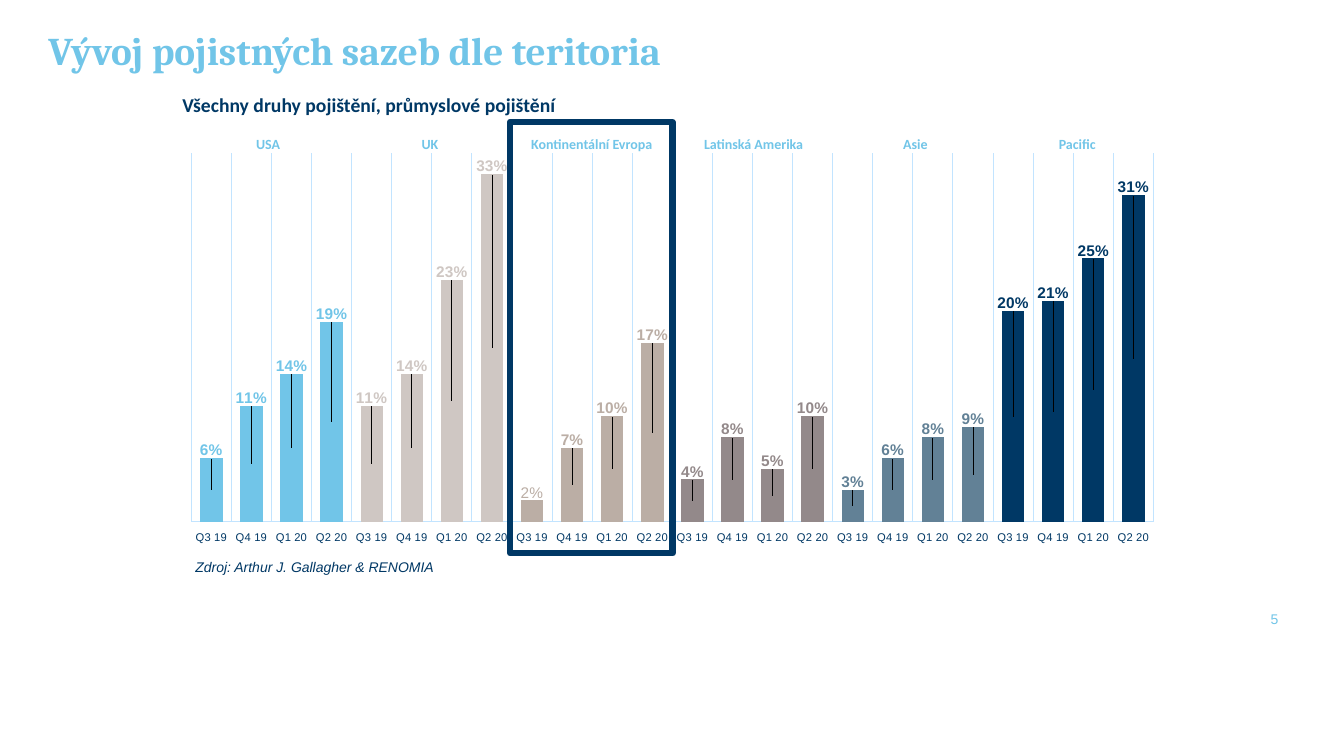
from lxml import etree
from pptx import Presentation
from pptx.chart.data import CategoryChartData
from pptx.dml.color import RGBColor
from pptx.enum.chart import XL_CHART_TYPE as ChartType, XL_LABEL_POSITION as LabelPosition
from pptx.enum.chart import XL_TICK_LABEL_POSITION as TickLabels, XL_TICK_MARK as TickMark
from pptx.enum.shapes import MSO_SHAPE as Shape
from pptx.enum.text import MSO_ANCHOR as Anchor, MSO_AUTO_SIZE as AutoSize, PP_ALIGN as Align
from pptx.oxml.ns import qn
from pptx.util import Inches, Pt

SKY = RGBColor(0x71, 0xC5, 0xE8)
NAVY = RGBColor(0x00, 0x38, 0x65)
PALE_BLUE = RGBColor(0xC2, 0xE4, 0xFF)
SAND = RGBColor(0xCF, 0xC7, 0xC3)
TAUPE = RGBColor(0xBB, 0xAE, 0xA5)
MAUVE = RGBColor(0x93, 0x89, 0x8A)
SLATE = RGBColor(0x62, 0x81, 0x96)

QUARTERS = ["Q3 19", "Q4 19", "Q1 20", "Q2 20"]
REGIONS = [
    ("USA", SKY, [0.06, 0.11, 0.14, 0.19]),
    ("UK", SAND, [0.11, 0.14, 0.23, 0.33]),
    ("Kontinentální Evropa", TAUPE, [0.02, 0.07, 0.10, 0.17]),
    ("Latinská Amerika", MAUVE, [0.04, 0.08, 0.05, 0.10]),
    ("Asie", SLATE, [0.03, 0.06, 0.08, 0.09]),
    ("Pacific", NAVY, [0.20, 0.21, 0.25, 0.31]),
]
REGION_LEFT, REGION_PITCH, REGION_WIDTH = 14.06, 12.04, 11.78
AXIS_MAXIMUM = 0.35
PLOT_AREA = {"x": 0.02, "y": 0.02, "w": 0.96, "h": 0.9}
LABEL_GAP = 0.02


def manual_layout(settings):
    """Return a chart layout element with the given settings."""
    layout = etree.Element(qn("c:layout"))
    manual = etree.SubElement(layout, qn("c:manualLayout"))
    for name, value in settings.items():
        etree.SubElement(manual, qn(f"c:{name}")).set("val", str(value))
    return layout


class SlideBuilder:
    """Draw styled elements on a slide divided into 100 columns and 100 rows."""

    def __init__(self, presentation):
        """Add a title-only slide and measure its grid."""
        self.slide = presentation.slides.add_slide(presentation.slide_layouts[5])
        self.column = presentation.slide_width / 100
        self.row = presentation.slide_height / 100

    def box(self, left, top, width, height):
        """Convert columns and rows to slide lengths."""
        return (round(left * self.column), round(top * self.row),
                round(width * self.column), round(height * self.row))

    def set_text(self, shape, text, size, font_name, color, bold=False, italic=False,
                 align=Align.LEFT, anchor=Anchor.MIDDLE, spacing=0.9):
        """Fill a shape with one formatted paragraph."""
        frame = shape.text_frame
        frame.text = text
        frame.word_wrap = True
        frame.auto_size = AutoSize.NONE
        frame.vertical_anchor = anchor
        paragraph = frame.paragraphs[0]
        paragraph.alignment = align
        paragraph.line_spacing = spacing
        font = paragraph.runs[0].font
        font.name, font.size = font_name, Pt(size)
        font.bold, font.italic = bold, italic
        font.color.rgb = color

    def title(self, text, *cells):
        """Move and fill the title placeholder."""
        shape = self.slide.shapes.title
        shape.left, shape.top, shape.width, shape.height = self.box(*cells)
        self.set_text(shape, text, 28, "Cambria", SKY, bold=True)

    def text(self, text, cells, size, font_name, color, **style):
        """Add a text box."""
        shape = self.slide.shapes.add_textbox(*self.box(*cells))
        self.set_text(shape, text, size, font_name, color, **style)

    def frame(self, *cells):
        """Add an unfilled highlight rectangle."""
        shape = self.slide.shapes.add_shape(Shape.RECTANGLE, *self.box(*cells))
        shape.shadow.inherit = False
        shape.fill.background()
        shape.line.color.rgb = NAVY
        shape.line.width = Pt(4.5)

    def chart(self, *cells):
        """Add the column chart of rates by region and quarter."""
        data = CategoryChartData(number_format="0%")
        data.categories = QUARTERS * len(REGIONS)
        data.add_series("Series 1", [value for region in REGIONS for value in region[2]])
        chart = self.slide.shapes.add_chart(
            ChartType.COLUMN_STACKED, *self.box(*cells), data).chart
        chart.has_legend = chart.has_title = False
        chart.font.name, chart.font.size = "Arial", Pt(10)
        chart.font.color.rgb = NAVY
        self.axes(chart)
        plot = chart.plots[0]
        plot.gap_width, plot.overlap, plot.vary_by_categories = 79, 100, False
        series = plot.series[0]
        series.format.fill.solid()
        series.format.fill.fore_color.rgb = NAVY
        self.labels(series.data_labels, SKY)
        for region_index, (_, color, values) in enumerate(REGIONS):
            for quarter_index, value in enumerate(values):
                index = region_index * len(QUARTERS) + quarter_index
                self.bar(series.points[index], value, color)
        for label in series._element.iter(qn("c:dLbl")):
            value = series.values[int(label.find(qn("c:idx")).get("val"))]
            rise = value / AXIS_MAXIMUM * PLOT_AREA["h"] / 2 + LABEL_GAP
            for old_layout in label.findall(qn("c:layout")):
                label.remove(old_layout)
            label.insert(1, manual_layout({"x": 0, "y": -rise}))
        area = chart._chartSpace.find(f".//{qn('c:plotArea')}")
        for old_layout in area.findall(qn("c:layout")):
            area.remove(old_layout)
        area.insert(0, manual_layout(
            {"layoutTarget": "inner", "xMode": "edge", "yMode": "edge", **PLOT_AREA}))

    def axes(self, chart):
        """Style the category axis and hide the value axis."""
        axis = chart.category_axis
        axis.tick_label_position = TickLabels.LOW
        axis.major_tick_mark = axis.minor_tick_mark = TickMark.NONE
        axis.tick_labels.font.name = "Arial"
        axis.tick_labels.font.size = Pt(8)
        axis.tick_labels.font.color.rgb = NAVY
        axis.has_major_gridlines = True
        for line in (axis.format.line, axis.major_gridlines.format.line):
            line.color.rgb = PALE_BLUE
            line.width = Pt(0.75)
        axis = chart.value_axis
        axis.minimum_scale, axis.maximum_scale = 0, AXIS_MAXIMUM
        axis.has_major_gridlines = False
        axis.visible = False

    def labels(self, labels, color):
        """Style the value labels of the series."""
        labels.show_value = True
        labels.number_format, labels.number_format_is_linked = "0%", False
        labels.position = LabelPosition.CENTER
        self.label_font(labels.font, color)

    def label_font(self, font, color, bold=True):
        """Style the font of a value label."""
        font.name, font.size, font.bold = "Arial", Pt(11), bold
        font.color.rgb = color

    def bar(self, point, value, color):
        """Colour one bar and its label; the smallest value is set in regular type."""
        point.format.fill.solid()
        point.format.fill.fore_color.rgb = color
        self.label_font(point.data_label.font, color, bold=value > 0.02)
        point.data_label.position = LabelPosition.CENTER


def main():
    """Build and save the slide."""
    presentation = Presentation()
    presentation.slide_width, presentation.slide_height = Inches(13.33), Inches(7.5)
    builder = SlideBuilder(presentation)
    builder.text("5", (72.68, 79.2, 23.18, 5.33), 10, "Arial", SKY,
                 align=Align.RIGHT, spacing=1)
    builder.title("Vývoj pojistných sazeb dle teritoria", 2.85, 2.53, 83.2, 8.93)
    builder.chart(12.75, 19.2, 74.57, 54.13)
    builder.text("Všechny druhy pojištění, průmyslové pojištění",
                 (12.83, 10.93, 55.36, 6.13), 14, "Calibri", NAVY, bold=True)
    for index, (name, _, _) in enumerate(REGIONS):
        left = REGION_LEFT + index * REGION_PITCH
        builder.text(name, (left, 17.2, REGION_WIDTH, 3.87), 10, "Calibri", SKY,
                     bold=True, align=Align.CENTER)
    builder.text("Zdroj: Arthur J. Gallagher & RENOMIA", (13.8, 73.2, 21.6, 3.6),
                 10, "Arial", NAVY, italic=True, anchor=Anchor.TOP, spacing=1)
    builder.frame(37.96, 16.13, 12.08, 57.07)
    presentation.save("out.pptx")


if __name__ == "__main__":
    main()
